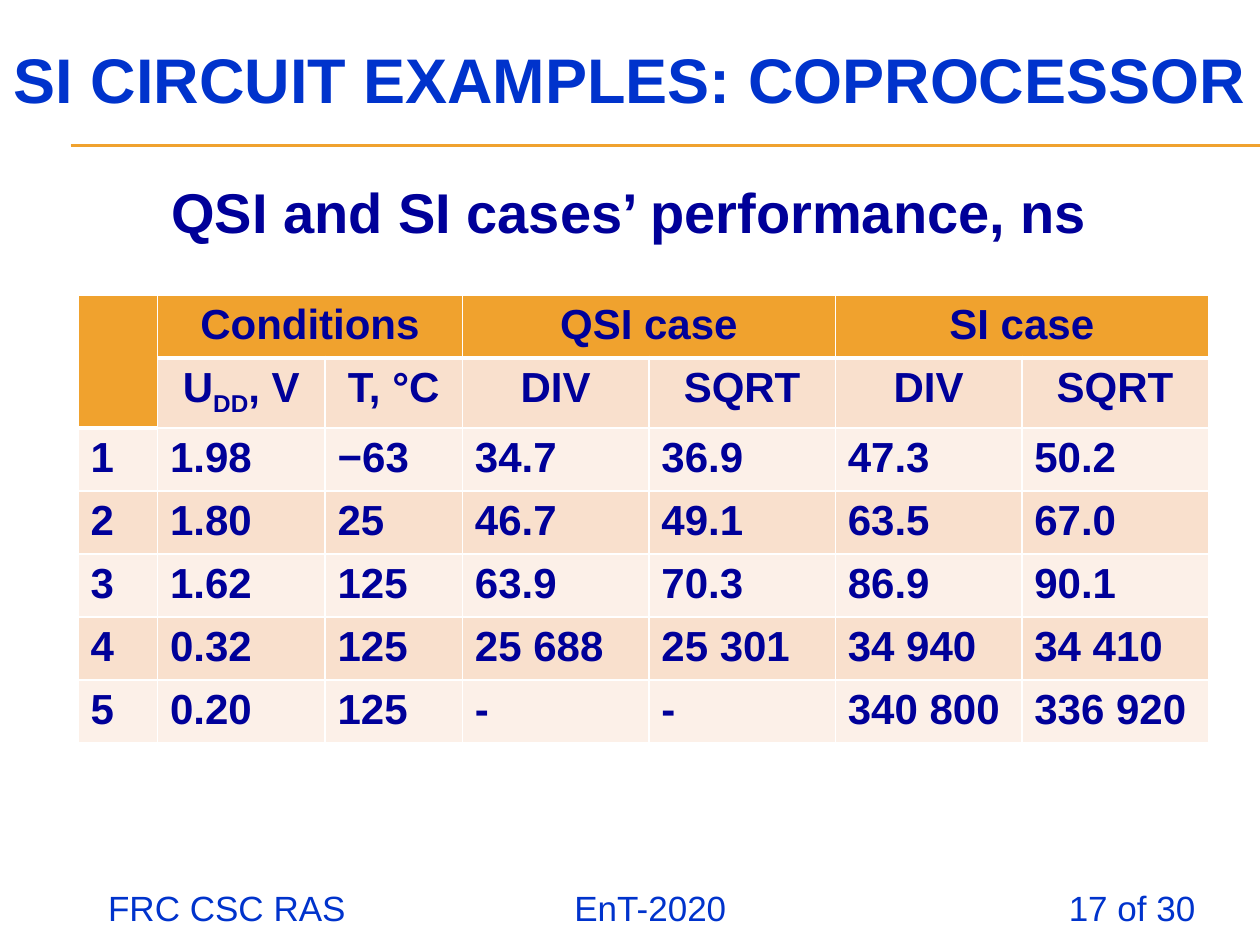
from dataclasses import dataclass

from lxml.etree import SubElement as Sub
from pptx import Presentation
from pptx.dml.color import RGBColor as RGB
from pptx.enum.text import MSO_ANCHOR as Anchor, MSO_AUTO_SIZE as Fit, PP_ALIGN as Align
from pptx.oxml.ns import qn
from pptx.util import Inches, Pt


@dataclass(frozen=True)
class Theme:
    """Colours, font and type sizes of the slide."""
    font: str = "Arial"
    blue: str = "0033CC"
    navy: str = "000099"
    gold: str = "F0A22E"
    dark: str = "F9E0CD"
    pale: str = "FCF0E8"
    white: str = "FFFFFF"
    title: int = 36
    head: int = 32
    cell: int = 24
    foot: int = 20


T = Theme()
WIDE, HIGH = 10, 7.5
LEFT = 0.62
COLS = [0.63, 1.33, 1.09] + [1.48] * 4
ROW = 0.5
GROUPS = ["Conditions", "QSI case", "SI case"]
HEADS = ["", "U|DD|, V", "T, °C"] + ["DIV", "SQRT"] * 2
DATA = [
    ["1", "1.98", "−63", "34.7", "36.9", "47.3", "50.2"],
    ["2", "1.80", "25", "46.7", "49.1", "63.5", "67.0"],
    ["3", "1.62", "125", "63.9", "70.3", "86.9", "90.1"],
    ["4", "0.32", "125", "25 688", "25 301", "34 940", "34 410"],
    ["5", "0.20", "125", "-", "-", "340 800", "336 920"],
]


def style(para, size, color, bold=True, align=Align.LEFT):
    """Set the font and alignment of a paragraph."""
    font = para.font
    font.name, font.size, font.bold = T.font, Pt(size), bold
    font.color.rgb = RGB.from_string(color)
    para.alignment = align


def inset(frame):
    """Remove the margins of a text frame."""
    frame.margin_left = frame.margin_right = 0
    frame.margin_top = frame.margin_bottom = 0


def rule(slide, y):
    """Draw a gold line from the left margin to the slide's edge."""
    line = slide.shapes.add_connector(1, Inches(0.56), Inches(y), Inches(WIDE), Inches(y))
    line.line.color.rgb = RGB.from_string(T.gold)
    line.line.width = Pt(0.75)
    Sub(line._element.spPr, qn("a:effectLst"))


def title(slide, text):
    """Fill and place the title."""
    shape = slide.shapes.title
    shape.left, shape.top = 0, Inches(0.16)
    shape.width, shape.height = Inches(WIDE), Inches(0.92)
    frame = shape.text_frame
    frame.text = text
    frame.auto_size = Fit.NONE
    frame.vertical_anchor = Anchor.MIDDLE
    inset(frame)
    style(frame.paragraphs[0], T.title, T.blue, align=Align.CENTER)


def label(slide, text, x, y, w, h):
    """Add a wrapped text box and return its frame."""
    box = slide.shapes.add_textbox(Inches(x), Inches(y), Inches(w), Inches(h))
    frame = box.text_frame
    frame.word_wrap = True
    frame.text = text
    return frame


def footer(slide, parts):
    """Add the footer, with its parts set on tab stops."""
    frame = label(slide, "\t" + "\t".join(parts), 0, 6.99, WIDE, 0.32)
    para = frame.paragraphs[0]
    style(para, T.foot, T.blue, bold=False)
    tabs = Sub(para._p.get_or_add_pPr(), qn("a:tabLst"))
    para._p.pPr.insert(0, tabs)
    for pos, kind in [(0.76, "l"), (4.46, "l"), (9.39, "r")]:
        Sub(tabs, qn("a:tab"), pos=str(Inches(pos)), algn=kind)


def edges(cell, base):
    """Draw white cell borders with a bottom line of the given width."""
    props = cell._tc.get_or_add_tcPr()
    for side, width in zip("LRTB", (1, 1, 1, base)):
        line = Sub(props, qn(f"a:ln{side}"), w=str(Pt(width)))
        Sub(Sub(line, qn("a:solidFill")), qn("a:srgbClr"), val=T.white)


def paint(cell, text, fill, align, base=1):
    """Fill a cell; the part of its text between bars is lowered."""
    edges(cell, base)
    cell.fill.solid()
    cell.fill.fore_color.rgb = RGB.from_string(fill)
    para = cell.text_frame.paragraphs[0]
    style(para, T.cell, T.navy, align=align)
    for i, part in enumerate(text.split("|")):
        run = para.add_run()
        run.text = part
        if i % 2:
            run.font._element.set("baseline", "-25000")


def grid(slide):
    """Add the performance table."""
    top = ["", *(t for name in GROUPS for t in (name, ""))]
    rows = [top, HEADS, *DATA]
    table = slide.shapes.add_table(
        len(rows), len(COLS), Inches(LEFT), Inches(2.34),
        Inches(sum(COLS)), Inches(ROW * len(rows))).table
    for col, width in zip(table.columns, COLS):
        col.width = Inches(width)
    for r, row in enumerate(rows):
        table.rows[r].height = Inches(ROW)
        for c, text in enumerate(row):
            gold = r == 0 or (r == 1 and c == 0)
            fill = T.gold if gold else T.dark if r % 2 else T.pale
            align = Align.CENTER if r < 2 else Align.LEFT
            paint(table.cell(r, c), text, fill, align, 3 if gold else 1)
    table.cell(0, 0).merge(table.cell(1, 0))
    for c in range(1, len(COLS), 2):
        table.cell(0, c).merge(table.cell(0, c + 1))


def main():
    """Build and save the slide."""
    deck = Presentation()
    deck.slide_width, deck.slide_height = Inches(WIDE), Inches(HIGH)
    slide = deck.slides.add_slide(deck.slide_layouts[5])
    for y in (1.15, 1.16):
        rule(slide, y)
    title(slide, "SI CIRCUIT EXAMPLES: COPROCESSOR")
    footer(slide, ["FRC CSC RAS", "EnT-2020", "17 of 30"])
    head = label(slide, "QSI and SI cases’ performance, ns", LEFT, 1.41, 8.75, 0.54)
    inset(head)
    style(head.paragraphs[0], T.head, T.navy, align=Align.CENTER)
    grid(slide)
    deck.save("out.pptx")


if __name__ == "__main__":
    main()
